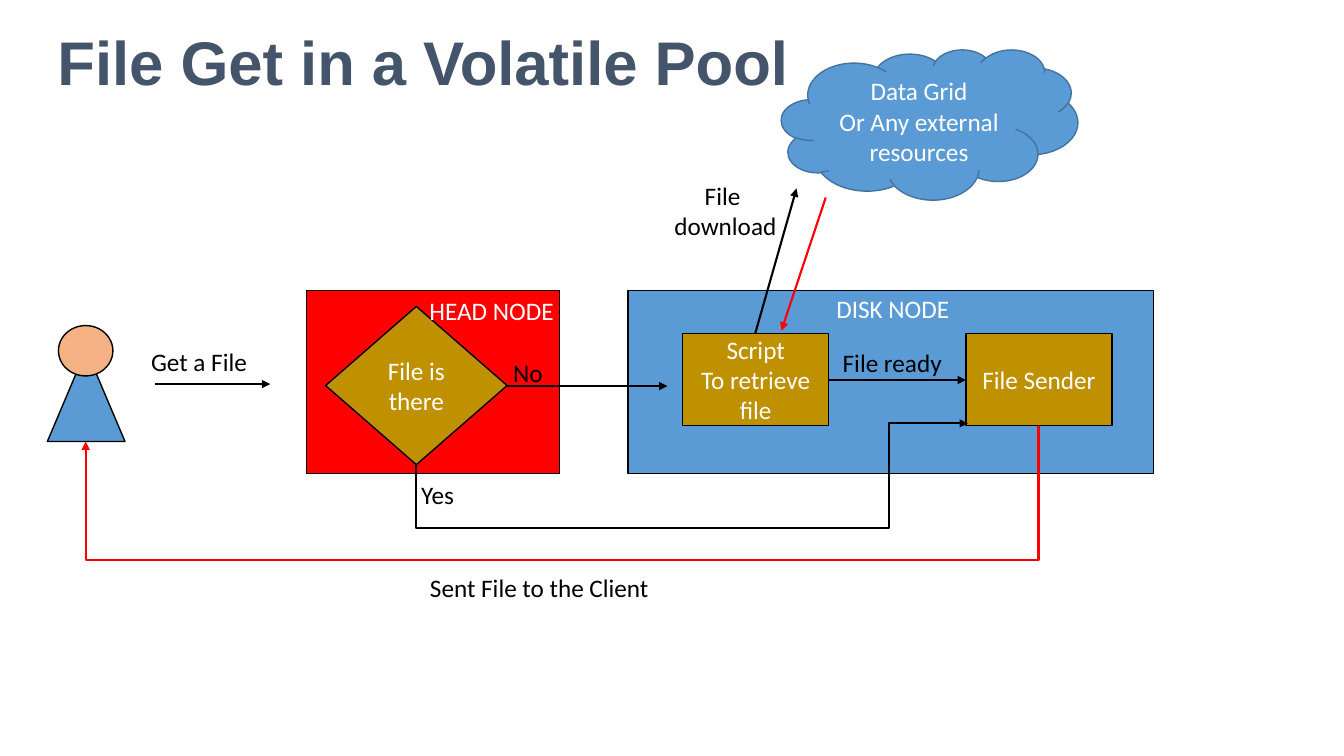
import pptx
import pptx.util
import pptx.dml.color
import pptx.enum.shapes
import pptx.enum.text
import pptx.oxml
import pptx.oxml.ns

Inches = pptx.util.Inches
Pt = pptx.util.Pt
Kind = pptx.enum.shapes.MSO_SHAPE
Align = pptx.enum.text.PP_ALIGN
Anchor = pptx.enum.text.MSO_ANCHOR

COLORS = {
    "black": "000000", "white": "FFFFFF", "red": "FF0000", "blue": "5B9BD5",
    "edge": "43739E", "gold": "BF9000", "skin": "F4B183", "title": "44546A",
}


def color(name):
    """Return the named colour."""
    return pptx.dml.color.RGBColor.from_string(COLORS[name])


def write(frame, text, ink, align=Align.CENTER):
    """Fill a text frame, one paragraph to a line."""
    frame.text = text
    for para in frame.paragraphs:
        para.alignment = align
        para.font.name = "Calibri"
        para.font.size = Pt(18)
        para.font.color.rgb = color(ink)


def shape(slide, kind, box, fill, text="", edge="black"):
    """Add an outlined shape with centred text."""
    item = slide.shapes.add_shape(kind, *map(Inches, box))
    item.shadow.inherit = False
    item.fill.solid()
    item.fill.fore_color.rgb = color(fill)
    item.line.color.rgb = color(edge)
    item.line.width = Pt(1)
    if text:
        item.text_frame.vertical_anchor = Anchor.MIDDLE
        write(item.text_frame, text, "white")


def label(slide, box, text, ink="black", align=Align.CENTER):
    """Add a caption that does not wrap."""
    frame = slide.shapes.add_textbox(*map(Inches, box)).text_frame
    frame.word_wrap = False
    write(frame, text, ink, align)


def tip(item, ink):
    """Style a line and put an arrowhead at its end."""
    item.line.color.rgb = color(ink)
    item.line.width = Pt(1.5)
    line = item.element.spPr.find(pptx.oxml.ns.qn("a:ln"))
    head = '<a:tailEnd type="triangle" %s/>' % pptx.oxml.ns.nsdecls("a")
    line.append(pptx.oxml.parse_xml(head))


def arrow(slide, start, end, ink="black"):
    """Add a straight arrow."""
    kind = pptx.enum.shapes.MSO_CONNECTOR.STRAIGHT
    item = slide.shapes.add_connector(kind, *map(Inches, start + end))
    tip(item, ink)
    flat = "<a:effectLst %s/>" % pptx.oxml.ns.nsdecls("a")
    item.element.spPr.append(pptx.oxml.parse_xml(flat))


def route(slide, points, ink="black"):
    """Add an arrow that bends at each inner point."""
    start, *rest = [(Inches(x), Inches(y)) for x, y in points]
    path = slide.shapes.build_freeform(*start)
    path.add_line_segments(rest, close=False)
    item = path.convert_to_shape()
    item.shadow.inherit = False
    item.fill.background()
    tip(item, ink)


def title(slide, box, text):
    """Place and format the title."""
    item = slide.shapes.title
    item.left, item.top, item.width, item.height = map(Inches, box)
    frame = item.text_frame
    frame.text = text
    frame.vertical_anchor = Anchor.MIDDLE
    para = frame.paragraphs[0]
    para.alignment = Align.LEFT
    para.line_spacing = 0.9
    para.font.name = "Arial"
    para.font.size = Pt(44)
    para.font.bold = True
    para.font.color.rgb = color("title")


def client(slide, box):
    """Draw the client and its request."""
    x, y, w, h = box
    shape(slide, Kind.ISOSCELES_TRIANGLE, (x, y + 0.24, w, h - 0.24), "blue")
    shape(slide, Kind.OVAL, (x + 0.11, y, 0.54, 0.5), "skin")
    label(slide, (x + 0.93, y + 0.16, 1.16, 0.4), "Get a File", align=Align.LEFT)
    arrow(slide, (x + 1.07, y + 0.58), (x + 2.21, y + 0.58))


def head(slide, box):
    """Draw the head node and its decision."""
    x, y, w, h = box
    shape(slide, Kind.RECTANGLE, box, "red")
    shape(slide, Kind.DIAMOND, (x + 0.19, y + 0.16, 1.8, 1.57), "gold", "File is there")
    label(slide, (x + 1.11, y, 1.45, 0.4), "HEAD NODE", "white")
    label(slide, (x + 1.04, y + h + 0.01, 0.53, 0.4), "Yes", align=Align.LEFT)
    label(slide, (x + 1.95, y + 0.62, 0.5, 0.4), "No", align=Align.LEFT)


def disk(slide, box):
    """Draw the disk node and its two steps."""
    x, y, w, h = box
    shape(slide, Kind.RECTANGLE, box, "blue")
    label(slide, (x + 1.96, y - 0.02, 1.33, 0.4), "DISK NODE", "white")
    for gap, text in ((0.54, "Script\nTo retrieve file"), (3.35, "File Sender")):
        shape(slide, Kind.RECTANGLE, (x + gap, y + 0.43, 1.45, 0.91), "gold", text)
    arrow(slide, (x + 1.99, y + 0.89), (x + 3.35, y + 0.89))
    label(slide, (x + 2.03, y + 0.52, 1.2, 0.4), "File ready", align=Align.LEFT)


def grid(slide, box):
    """Draw the outside resources and the download."""
    x, y, w, h = box
    text = "Data Grid\nOr Any external resources"
    shape(slide, Kind.CLOUD, box, "blue", text, "edge")
    arrow(slide, (x - 0.26, y + 2.82), (x + 0.15, y + 1.38))
    arrow(slide, (x + 0.44, y + 1.47), (x, y + 2.79), "red")
    label(slide, (x - 1.17, y + 1.25, 1.23, 0.71), "File \ndownload")


def flow(slide, box):
    """Draw the paths that join the client and the nodes."""
    x, y, w, h = box
    right, base = x + w, y + h
    fork, turn, low = x + 3.28, x + 7.97, base - 0.32
    arrow(slide, (x + 4.18, y), (x + 5.77, y))
    route(slide, [(right, y + 0.4), (right, base), (x, base), (x, y + 0.55)], "red")
    route(slide, [(fork, y + 0.78), (fork, low), (turn, low),
                  (turn, y + 0.37), (x + 8.75, y + 0.37)])
    label(slide, (x + 3.3, base + 0.07, 2.4, 0.4), "Sent File to the Client")


def main():
    """Build and save the slide."""
    deck = pptx.Presentation()
    deck.slide_width, deck.slide_height = Inches(13.33), Inches(7.5)
    slide = deck.slides.add_slide(deck.slide_layouts[5])
    title(slide, (0.47, -0.07, 11.5, 1.45), "File Get in a Volatile Pool")
    client(slide, (0.47, 3.23, 0.77, 1.15))
    head(slide, (3.04, 2.88, 2.51, 1.82))
    disk(slide, (6.23, 2.88, 5.21, 1.82))
    grid(slide, (7.75, 0.49, 2.94, 1.49))
    flow(slide, (0.85, 3.83, 9.45, 1.73))
    deck.save("out.pptx")


if __name__ == "__main__":
    main()
